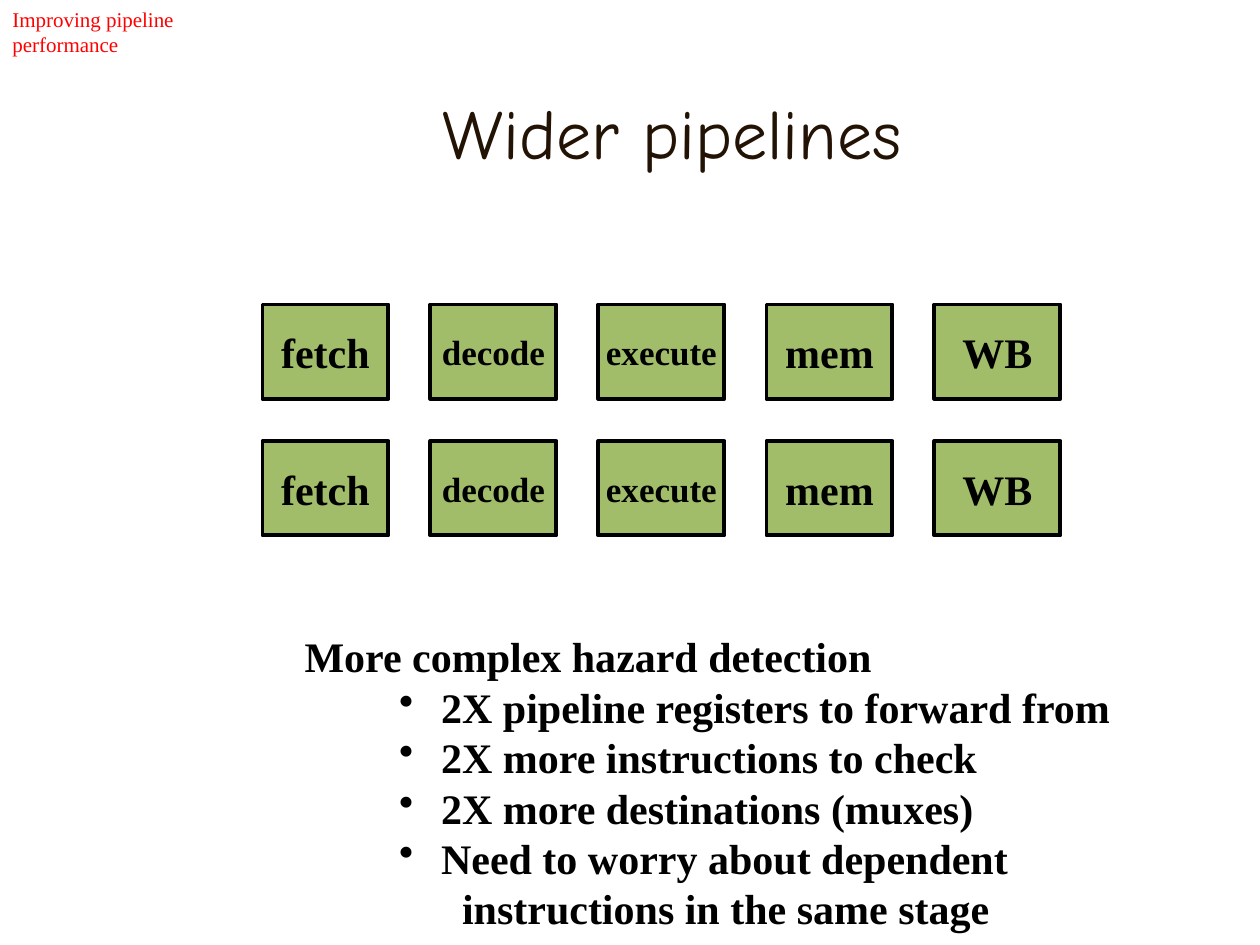
from lxml import etree
from pptx import Presentation
from pptx.dml.color import RGBColor
from pptx.enum import shapes, text
from pptx.oxml import ns
from pptx.util import Pt


def paint(code):
    return RGBColor.from_string(code)


class Deck:
    serif = "Times New Roman"
    script = "Comic Neue"
    black = "000000"
    green = "A1BD69"
    red = "FF0000"
    brown = "221304"

    def __init__(self, wide, high):
        self.file = Presentation()
        self.file.slide_width = Pt(wide)
        self.file.slide_height = Pt(high)
        self.slide = self.file.slides.add_slide(self.file.slide_layouts[5])

    def run(self, para, words, size, color, face=None, bold=False):
        run = para.add_run()
        run.text = words
        run.font.size = Pt(size)
        run.font.name = face or self.serif
        run.font.bold = bold
        run.font.color.rgb = paint(color)

    def title(self, words, place):
        shape = self.slide.shapes.title
        shape.left, shape.top, shape.width, shape.height = map(Pt, place)
        shape.text_frame.vertical_anchor = text.MSO_ANCHOR.MIDDLE
        para = shape.text_frame.paragraphs[0]
        para.alignment = text.PP_ALIGN.CENTER
        self.run(para, words, 40, self.brown, self.script)

    def stage(self, words, size, place):
        shape = self.slide.shapes.add_shape(
            shapes.MSO_SHAPE.RECTANGLE, *map(Pt, place))
        shape.shadow.inherit = False
        shape.fill.solid()
        shape.fill.fore_color.rgb = paint(self.green)
        shape.line.color.rgb = paint(self.black)
        shape.line.width = Pt(2.25)
        frame = shape.text_frame
        frame.word_wrap = False
        frame.vertical_anchor = text.MSO_ANCHOR.MIDDLE
        para = frame.paragraphs[0]
        para.alignment = text.PP_ALIGN.CENTER
        self.run(para, words, size, self.black, bold=True)

    def note(self, lines, place, size, color, bold=False):
        frame = self.slide.shapes.add_textbox(*map(Pt, place)).text_frame
        frame.word_wrap = True
        for row, (words, left, hang) in enumerate(lines):
            para = frame.add_paragraph() if row else frame.paragraphs[0]
            self.run(para, words, size, color, bold=bold)
            self.indent(para, left, hang)

    def indent(self, para, left, hang):
        props = para._p.get_or_add_pPr()
        props.set("marL", str(Pt(left)))
        props.set("indent", str(Pt(-hang)))
        if hang:
            para.level = 2
            mark = etree.SubElement(props, ns.qn("a:buChar"))
            mark.set("char", "•")


def main():
    deck = Deck(720, 540)
    deck.title("Wider pipelines", (84, 30, 600, 90))

    stages = [("fetch", 24), ("decode", 20), ("execute", 20),
              ("mem", 24), ("WB", 24)]
    for row in range(2):
        for col, (words, size) in enumerate(stages):
            deck.stage(words, size, (150 + 96 * col, 174 + 78 * row, 72, 54))

    points = ["2X pipeline registers to forward from",
              "2X more instructions to check",
              "2X more destinations (muxes)",
              "Need to worry about dependent"]
    lines = [("More complex hazard detection", 0, 0)]
    lines += [(point, 78, 24) for point in points]
    lines.append(("instructions in the same stage", 90, 0))
    deck.note(lines, (167, 357, 484, 180), 24, deck.black, bold=True)

    deck.note([("Improving pipeline", 0, 0), ("performance", 0, 0)],
              (0, 0, 108, 36), 12, deck.red)
    deck.file.save("out.pptx")


if __name__ == "__main__":
    main()
